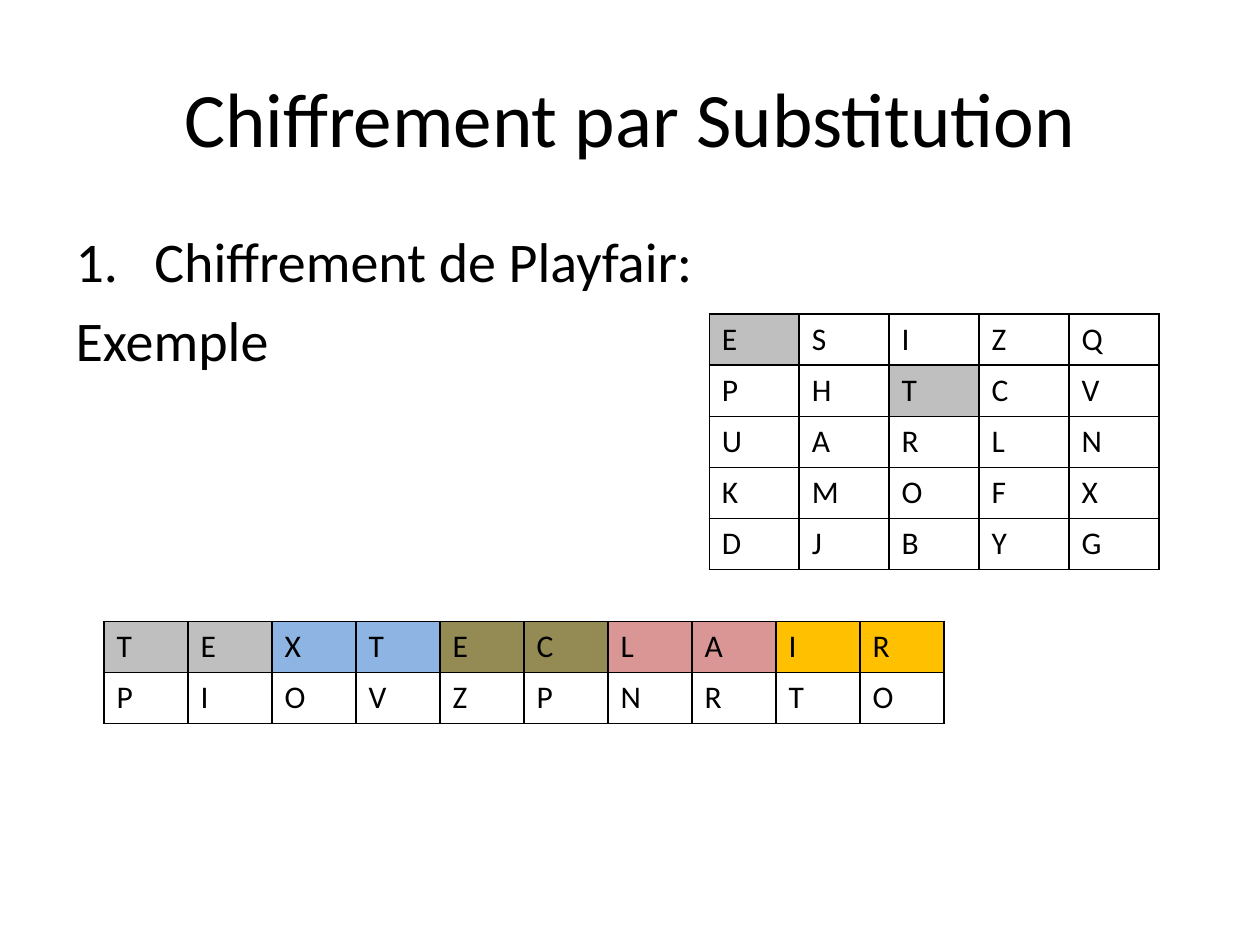
from lxml.etree import SubElement
from pptx import Presentation
from pptx.dml.color import RGBColor
from pptx.enum.text import MSO_ANCHOR, PP_ALIGN
from pptx.oxml.ns import qn
from pptx.util import Pt

BLACK = RGBColor(0x00, 0x00, 0x00)
GREY = RGBColor(0xBF, 0xBF, 0xBF)
BLUE = RGBColor(0x8E, 0xB4, 0xE3)
OLIVE = RGBColor(0x94, 0x8A, 0x54)
ROSE = RGBColor(0xD9, 0x96, 0x94)
GOLD = RGBColor(0xFF, 0xC0, 0x00)

PAIR_COLORS = [GREY, BLUE, OLIVE, ROSE, GOLD]
KEY_SQUARE = ["ESIZQ", "PHTCV", "UARLN", "KMOFX", "DJBYG"]
MESSAGE = ["TEXTECLAIR", "PIOVZPNRTO"]
ROW_HEIGHT = 29.2


class SlideBuilder:
    font_name = "Calibri"

    def __init__(self, page):
        self.page = page

    def style(self, para, size):
        para.font.name = self.font_name
        para.font.size = Pt(size)
        para.font.color.rgb = BLACK

    def place(self, box, left, top, width, height):
        box.left, box.top = Pt(left), Pt(top)
        box.width, box.height = Pt(width), Pt(height)

    def title(self, text, *bounds):
        box = self.page.shapes.title
        self.place(box, *bounds)
        box.text_frame.text = text
        box.text_frame.vertical_anchor = MSO_ANCHOR.MIDDLE
        para = box.text_frame.paragraphs[0]
        para.alignment = PP_ALIGN.CENTER
        self.style(para, 44)

    def body(self, numbered, plain, *bounds):
        box = self.page.placeholders[1]
        self.place(box, *bounds)
        box.text_frame.text = f"{numbered}\n{plain}"
        first, second = box.text_frame.paragraphs
        self.bullet(first, 45, "a:buAutoNum", type="arabicPeriod")
        self.bullet(second, 0, "a:buNone")
        for para in (first, second):
            self.style(para, 32)

    def bullet(self, para, hanging, tag, **attributes):
        properties = para._p.get_or_add_pPr()
        properties.set("marL", str(Pt(hanging)))
        properties.set("indent", str(-Pt(hanging)))
        SubElement(properties, qn(tag), **attributes)

    def borders(self, cell):
        properties = cell._tc.get_or_add_tcPr()
        for side in ("a:lnL", "a:lnR", "a:lnT", "a:lnB"):
            line = SubElement(properties, qn(side), w=str(Pt(1)))
            fill = SubElement(line, qn("a:solidFill"))
            SubElement(fill, qn("a:srgbClr"), val=str(BLACK))

    def table(self, rows, fills, left, top, column_width):
        columns = len(rows[0])
        table = self.page.shapes.add_table(
            len(rows), columns, Pt(left), Pt(top),
            Pt(column_width * columns), Pt(ROW_HEIGHT * len(rows))).table
        table.first_row = table.horz_banding = False
        for column in table.columns:
            column.width = Pt(column_width)
        for row_index, letters in enumerate(rows):
            table.rows[row_index].height = Pt(ROW_HEIGHT)
            for column_index, letter in enumerate(letters):
                cell = table.cell(row_index, column_index)
                cell.text = letter
                self.style(cell.text_frame.paragraphs[0], 18)
                self.borders(cell)
                color = fills.get((row_index, column_index))
                if color is None:
                    cell.fill.background()
                else:
                    cell.fill.solid()
                    cell.fill.fore_color.rgb = color


def main():
    deck = Presentation()
    deck.slide_width, deck.slide_height = Pt(720), Pt(540)
    builder = SlideBuilder(deck.slides.add_slide(deck.slide_layouts[1]))
    builder.title("Chiffrement par Substitution", 36, 21.6, 648, 90)
    builder.body("Chiffrement de Playfair:", "Exemple", 36, 126, 648, 356.4)
    pair_fills = {(0, index): PAIR_COLORS[index // 2] for index in range(10)}
    builder.table(MESSAGE, pair_fills, 59.5, 355, 48)
    builder.table(KEY_SQUARE, {(0, 0): GREY, (1, 2): GREY}, 405.3, 179.5, 51.4)
    deck.save("out.pptx")


if __name__ == "__main__":
    main()
